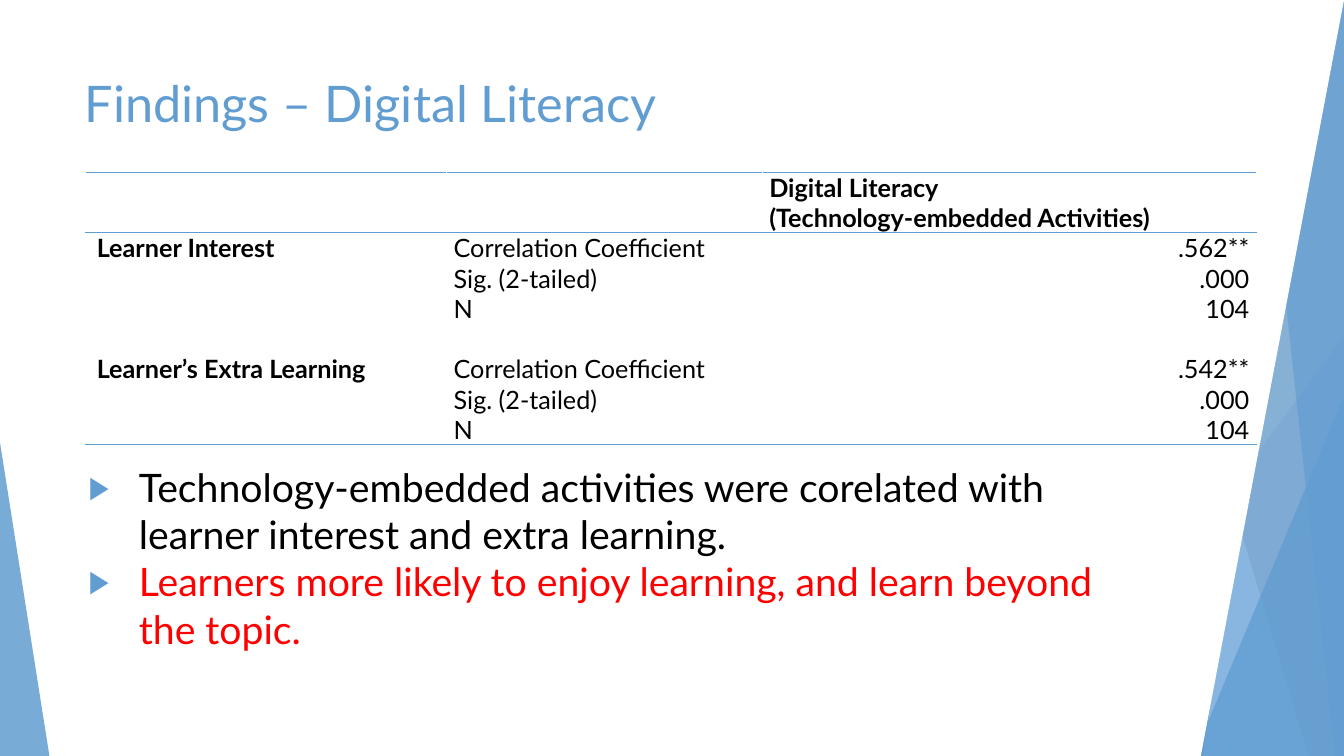
from dataclasses import dataclass

from lxml import etree
from pptx import Presentation
from pptx.dml.color import RGBColor
from pptx.enum.shapes import MSO_SHAPE
from pptx.enum.text import MSO_ANCHOR, MSO_AUTO_SIZE, PP_ALIGN
from pptx.oxml import parse_xml
from pptx.oxml.ns import nsdecls, qn
from pptx.util import Inches, Pt


@dataclass(frozen=True)
class Theme:
    font: str = "Lato"
    blue: str = "629DD1"
    mid_blue: str = "297FD5"
    deep_blue: str = "1F5FA0"
    pale_blue: str = "A1C4E3"
    white: str = "FFFFFF"
    black: str = "000000"
    red: str = "FF0000"
    title_size: int = 36
    body_size: int = 28
    table_size: int = 18


theme = Theme()


def style_paragraph(paragraph, size, color, bold=False):
    font = paragraph.font
    font.name = theme.font
    font.size = Pt(size)
    font.bold = bold
    font.color.rgb = RGBColor.from_string(color)


def set_borders(cell, top, bottom):
    sides = [("L", theme.white), ("R", theme.white), ("T", top), ("B", bottom)]
    properties = cell._tc.get_or_add_tcPr()
    for position, (side, color) in enumerate(sides):
        properties.insert(position, parse_xml(
            f'<a:ln{side} {nsdecls("a")} w="12700"><a:solidFill>'
            f'<a:srgbClr val="{color}"/></a:solidFill></a:ln{side}>'))


presentation = Presentation()
presentation.slide_width = Inches(13.33)
presentation.slide_height = Inches(7.5)
slide = presentation.slides.add_slide(presentation.slide_layouts[5])

# Background facets, back to front: colour, opacity in percent, outline.
# A triangle is given as (left, top, width, height, apex), others by corners.
facets = [
    (theme.blue, 30, [(12.44, 0), (13.33, 0), (13.33, 7.5), (10.53, 7.5)]),
    (theme.blue, 20, [(10.77, 0), (13.33, 0), (13.33, 7.5), (11.97, 7.5)]),
    (theme.mid_blue, 72, (10.24, 3.33, 3.09, 4.17, 1)),
    (theme.deep_blue, 70, [(10.72, 0), (13.33, 0), (13.33, 7.5), (12.98, 7.5)]),
    (theme.pale_blue, 70, [(13.05, 0), (13.33, 0), (13.33, 7.5), (11.93, 7.5)]),
    (theme.blue, 65, [(12.43, 0), (13.33, 0), (13.33, 7.5), (13.24, 7.5)]),
    (theme.blue, 80, (11.84, 3.93, 1.49, 3.57, 1)),
    (theme.blue, 85, (0, 4.39, 0.49, 3.11, 0)),
    (theme.white, 100, [(8.72, 0), (13.33, 0), (11.91, 7.5), (8.72, 7.5)]),
]
for color, opacity, outline in facets:
    if isinstance(outline, tuple):
        *box, apex = outline
        facet = slide.shapes.add_shape(
            MSO_SHAPE.ISOSCELES_TRIANGLE, *[Inches(length) for length in box])
        facet.adjustments[0] = apex
    else:
        corners = [(Inches(x), Inches(y)) for x, y in outline]
        builder = slide.shapes.build_freeform(*corners[0])
        builder.add_line_segments(corners[1:], close=True)
        facet = builder.convert_to_shape()
    facet.shadow.inherit = False
    facet.line.fill.background()
    facet.fill.solid()
    facet.fill.fore_color.rgb = RGBColor.from_string(color)
    if opacity < 100:
        color_node = facet.element.spPr.find(qn("a:solidFill"))[0]
        etree.SubElement(color_node, qn("a:alpha"), val=str(opacity * 1000))

# Title, moved in front of the facets
title = slide.shapes.title
title.element.getparent().append(title.element)
title.left, title.top = Inches(0.74), Inches(0.67)
title.width, title.height = Inches(10.69), Inches(0.76)
title.text_frame.text = "Findings – Digital Literacy"
title.text_frame.auto_size = MSO_AUTO_SIZE.NONE
title.text_frame.vertical_anchor = MSO_ANCHOR.TOP
title.text_frame.paragraphs[0].alignment = PP_ALIGN.LEFT
style_paragraph(title.text_frame.paragraphs[0], theme.title_size, theme.blue)

# Findings
body = slide.shapes.add_textbox(
    Inches(0.28), Inches(4.55), Inches(11.27), Inches(1.99))
body.text_frame.word_wrap = True
findings = [
    ("Technology-embedded activities were corelated with learner interest "
     "and extra learning.", theme.black),
    ("Learners more likely to enjoy learning, and learn beyond the topic.",
     theme.red),
]
body.text_frame.text = "\n".join(text for text, color in findings)
for paragraph, (text, color) in zip(body.text_frame.paragraphs, findings):
    properties = paragraph._p.get_or_add_pPr()
    properties.set("marL", str(Inches(1)))
    properties.set("indent", str(Inches(-0.5)))
    bullet_color = etree.SubElement(properties, qn("a:buClr"))
    etree.SubElement(bullet_color, qn("a:srgbClr"), val=theme.blue)
    etree.SubElement(properties, qn("a:buSzPct"), val="80000")
    etree.SubElement(properties, qn("a:buFont"), typeface="Arial")
    etree.SubElement(properties, qn("a:buChar"), char="▶")
    style_paragraph(paragraph, theme.body_size, color)

# Correlation table
rows = [
    ("", "", "Digital Literacy\n(Technology-embedded Activities)"),
    ("Learner Interest", "Correlation Coefficient", ".562**"),
    ("", "Sig. (2-tailed)", ".000"),
    ("", "N", "104"),
    ("", "", ""),
    ("Learner’s Extra Learning", "Correlation Coefficient", ".542**"),
    ("", "Sig. (2-tailed)", ".000"),
    ("", "N", "104"),
]
column_widths = [3.58, 3.13, 4.9]
table = slide.shapes.add_table(
    len(rows), len(column_widths), Inches(0.85), Inches(1.71),
    Inches(sum(column_widths)), Inches(2.7)).table
table.first_row = table.horz_banding = False
for column, width in zip(table.columns, column_widths):
    column.width = Inches(width)

last_row = len(rows) - 1
for row_index, texts in enumerate(rows):
    is_header = row_index == 0
    table.rows[row_index].height = Inches(0.6 if is_header else 0.3)
    top = theme.blue if row_index in (0, 1) else theme.white
    bottom = theme.blue if row_index in (0, last_row) else theme.white
    for column_index, text in enumerate(texts):
        cell = table.cell(row_index, column_index)
        cell.text = text
        cell.fill.background()
        cell.vertical_anchor = MSO_ANCHOR.MIDDLE
        cell.margin_left = cell.margin_right = Inches(0.07)
        cell.margin_top = cell.margin_bottom = 0
        set_borders(cell, top, bottom)
        for paragraph in cell.text_frame.paragraphs:
            if column_index == 0:
                paragraph._p.get_or_add_pPr().set("marL", str(Inches(0.04)))
            elif column_index == 2 and not is_header:
                paragraph.alignment = PP_ALIGN.RIGHT
            style_paragraph(paragraph, theme.table_size, theme.black,
                            bold=is_header or column_index == 0)

presentation.save("out.pptx")
